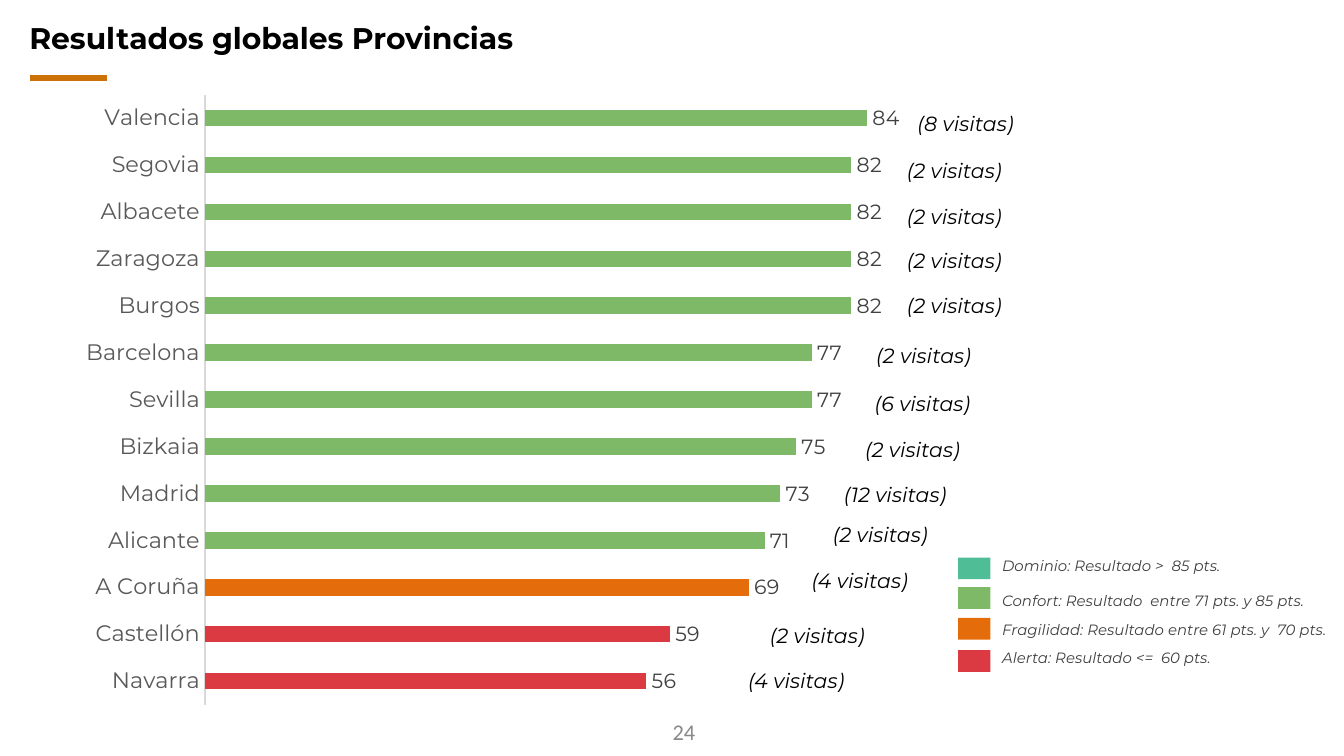
from dataclasses import dataclass

from lxml import etree
from pptx import Presentation
from pptx.chart.data import CategoryChartData
from pptx.dml.color import RGBColor
from pptx.enum import chart as charts, shapes, text
from pptx.oxml import parse_xml
from pptx.oxml.ns import nsdecls, qn
from pptx.util import Cm, Pt


@dataclass(frozen=True)
class Theme:
    accent: str = "CB7107"
    black: str = "000000"
    label: str = "404040"
    category: str = "595959"
    muted: str = "888888"
    axis: str = "D9D9D9"
    dominio: str = "4FBD95"
    confort: str = "7EB967"
    fragilidad: str = "E46C0A"
    alerta: str = "DC3A43"
    font: str = "Montserrat"
    number_font: str = "Calibri"
    title_size: int = 16
    category_size: int = 12
    value_size: int = 11
    legend_size: int = 8


THEME = Theme()

# province, score, visits, left and top of the visits note in cm
PROVINCES = [
    ("Valencia", 84, 8, 17.09, 1.98),
    ("Segovia", 82, 2, 16.89, 2.87),
    ("Albacete", 82, 2, 16.89, 3.73),
    ("Zaragoza", 82, 2, 16.89, 4.57),
    ("Burgos", 82, 2, 16.89, 5.41),
    ("Barcelona", 77, 2, 16.31, 6.35),
    ("Sevilla", 77, 6, 16.28, 7.26),
    ("Bizkaia", 75, 2, 16.1, 8.13),
    ("Madrid", 73, 12, 15.7, 8.99),
    ("Alicante", 71, 2, 15.49, 9.75),
    ("A Coruña", 69, 4, 15.09, 10.62),
    ("Castellón", 59, 2, 14.3, 11.66),
    ("Navarra", 56, 4, 13.89, 12.5),
]

# wording, colour, top of the swatch, top and width of the wording in cm
LEVELS = [
    ("Dominio: Resultado >  85 pts.", THEME.dominio, 10.54, 10.39, 4.9),
    ("Confort: Resultado  entre 71 pts. y 85 pts.", THEME.confort, 11.1, 11.05, 6.58),
    ("Fragilidad: Resultado entre 61 pts. y  70 pts.", THEME.fragilidad, 11.68, 11.61, 6.91),
    ("Alerta: Resultado <=  60 pts.", THEME.alerta, 12.29, 12.14, 4.72),
]


def level_color(score):
    if score > 85:
        return THEME.dominio
    if score > 70:
        return THEME.confort
    return THEME.fragilidad if score > 60 else THEME.alerta


def set_all(target, values):
    for name, value in values.items():
        setattr(target, name, value)


def style_font(font, size, color, name=THEME.font, **flags):
    set_all(font, {"size": Pt(size), "name": name, **flags})
    font.color.rgb = RGBColor.from_string(color)


def paint(fill, color):
    fill.solid()
    fill.fore_color.rgb = RGBColor.from_string(color)


def add_title(slide, wording):
    title = slide.shapes.title
    set_all(title, {"left": Cm(0.3), "top": Cm(0.33), "width": Cm(24.79), "height": Cm(1.19)})
    set_all(title.text_frame, {
        "text": wording,
        "auto_size": text.MSO_AUTO_SIZE.NONE,
        "vertical_anchor": text.MSO_ANCHOR.TOP,
    })
    paragraph = title.text_frame.paragraphs[0]
    set_all(paragraph, {"alignment": text.PP_ALIGN.LEFT, "line_spacing": 0.9})
    style_font(paragraph.runs[0].font, THEME.title_size, THEME.black, bold=True)


def add_title_rule(slide):
    rule = slide.shapes.add_connector(
        shapes.MSO_CONNECTOR.STRAIGHT, Cm(0.56), Cm(1.47), Cm(2.03), Cm(1.47))
    rule.line.width = Pt(3)
    rule.line.color.rgb = RGBColor.from_string(THEME.accent)
    etree.SubElement(rule._element.spPr, qn("a:effectLst"))


def add_label(slide, wording, box, size, color, align=text.PP_ALIGN.LEFT, frame=None, **font):
    label = slide.shapes.add_textbox(*(Cm(length) for length in box))
    set_all(label.text_frame, {"text": wording, "word_wrap": True, **(frame or {})})
    paragraph = label.text_frame.paragraphs[0]
    paragraph.alignment = align
    style_font(paragraph.runs[0].font, size, color, **font)


def add_swatch(slide, top, color):
    swatch = slide.shapes.add_shape(
        shapes.MSO_SHAPE.RECTANGLE, Cm(18.11), Cm(top), Cm(0.61), Cm(0.41))
    swatch.shadow.inherit = False
    paint(swatch.fill, color)
    swatch.line.fill.background()


def fix_plot_area(chart, **fractions):
    """Pin the inner plot area to fractions (x, y, w, h) of the chart."""
    sizes = "".join(f'<c:{key} val="{value}"/>' for key, value in fractions.items())
    layout = parse_xml(
        f'<c:layout {nsdecls("c")}><c:manualLayout><c:layoutTarget val="inner"/>'
        f'<c:xMode val="edge"/><c:yMode val="edge"/>{sizes}</c:manualLayout></c:layout>')
    plot_area = chart._chartSpace.chart.plotArea
    for old in plot_area.findall(qn("c:layout")):
        plot_area.remove(old)
    plot_area.insert(0, layout)


def add_score_chart(slide):
    bottom_up = PROVINCES[::-1]
    data = CategoryChartData(number_format="0")
    data.categories = [province for province, *_ in bottom_up]
    data.add_series("Series 1", [score for _, score, *_ in bottom_up])
    chart = slide.shapes.add_chart(
        charts.XL_CHART_TYPE.BAR_CLUSTERED, Cm(1.3), Cm(1.55), Cm(16.31), Cm(12.01), data).chart
    set_all(chart, {"has_legend": False, "has_title": False})
    style_font(chart.font, 10, THEME.black, THEME.number_font)
    fix_plot_area(chart, x=0.158, y=0.02, w=0.822, h=0.96)

    set_all(chart.value_axis, {
        "minimum_scale": 0, "maximum_scale": 90, "has_major_gridlines": False, "visible": False})
    provinces = chart.category_axis
    set_all(provinces, {
        "major_tick_mark": charts.XL_TICK_MARK.NONE,
        "minor_tick_mark": charts.XL_TICK_MARK.NONE,
        "has_major_gridlines": False,
    })
    style_font(provinces.tick_labels.font, THEME.category_size, THEME.category)
    provinces.format.line.width = Pt(0.75)
    provinces.format.line.color.rgb = RGBColor.from_string(THEME.axis)

    plot = chart.plots[0]
    set_all(plot, {"gap_width": 182, "vary_by_categories": False, "has_data_labels": True})
    set_all(plot.data_labels, {
        "show_value": True,
        "number_format": "0",
        "number_format_is_linked": False,
        "position": charts.XL_LABEL_POSITION.OUTSIDE_END,
    })
    style_font(plot.data_labels.font, THEME.value_size, THEME.label)
    scores = plot.series[0]
    paint(scores.format.fill, THEME.axis)
    for index, (_, score, *_) in enumerate(bottom_up):
        paint(scores.points[index].format.fill, level_color(score))


def add_visits(slide):
    for _, _, visits, left, top in PROVINCES:
        width = 2.57 if visits > 9 else 2.41
        add_label(slide, f"({visits} visitas)", (left, top, width, 0.74),
                  THEME.value_size, THEME.black, frame={"word_wrap": False}, italic=True)


def add_legend(slide):
    for wording, color, swatch_top, top, width in LEVELS:
        add_swatch(slide, swatch_top, color)
        add_label(slide, wording, (18.69, top, width, 0.61),
                  THEME.legend_size, THEME.label, italic=True)


def main():
    deck = Presentation()
    set_all(deck, {"slide_width": Cm(25.4), "slide_height": Cm(14.29)})
    slide = deck.slides.add_slide(deck.slide_layouts.get_by_name("Title Only"))
    add_title_rule(slide)
    add_title(slide, "Resultados globales Provincias")
    add_label(slide, "24", (11.1, 13.44, 2.29, 0.76), THEME.category_size, THEME.muted,
              align=text.PP_ALIGN.RIGHT, frame={"vertical_anchor": text.MSO_ANCHOR.MIDDLE},
              name=THEME.number_font)
    add_legend(slide)
    add_score_chart(slide)
    add_visits(slide)
    deck.save("out.pptx")


if __name__ == "__main__":
    main()
